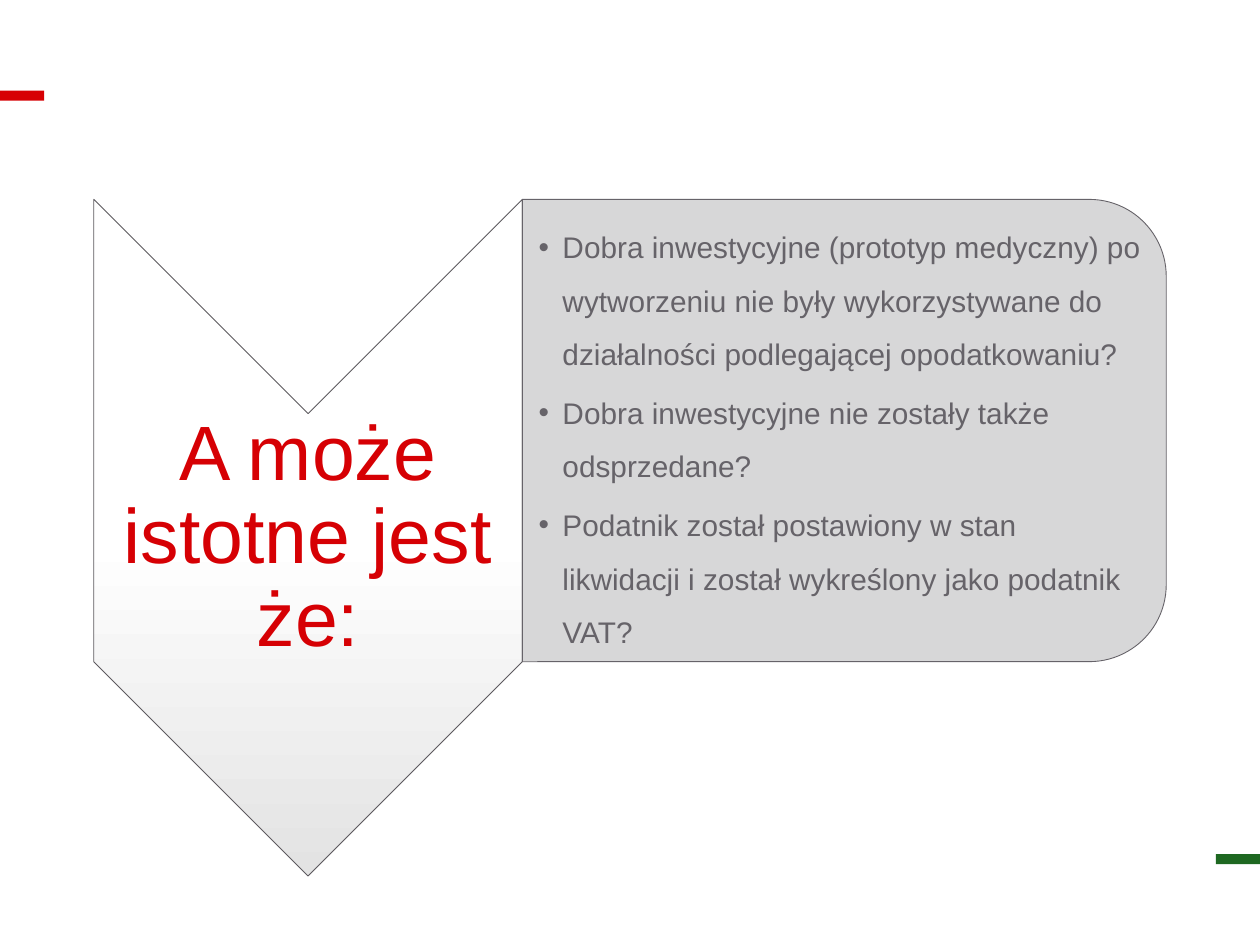
import lxml.etree
import pptx
import pptx.dml.color
import pptx.enum.shapes
import pptx.enum.text
import pptx.oxml.ns
import pptx.util

Cm = pptx.util.Cm
Pt = pptx.util.Pt
SHAPES = pptx.enum.shapes.MSO_SHAPE
ALIGN = pptx.enum.text.PP_ALIGN
RED = "D60004"
GREY = "666369"
TOP = 4.02
ARROW_LEFT = 1.89
ARROW_WIDTH = 8.64
PANEL_LEFT = ARROW_LEFT + ARROW_WIDTH
QUESTIONS = [
    "Dobra inwestycyjne (prototyp medyczny) po wytworzeniu nie były "
    "wykorzystywane do działalności podlegającej opodatkowaniu?",
    "Dobra inwestycyjne nie zostały także odsprzedane?",
    "Podatnik został postawiony w stan likwidacji i został wykreślony "
    "jako podatnik VAT?",
]


def colour(value):
    return pptx.dml.color.RGBColor.from_string(value)


def add_child(parent, tag, **attributes):
    return lxml.etree.SubElement(parent, pptx.oxml.ns.qn(tag), **attributes)


def write(para, text, size=17, ink=GREY, align=ALIGN.LEFT, spacing=1.0,
          after=0, bullet=False, hang=0.48):
    para.alignment = align
    para.line_spacing = spacing
    para.space_after = Pt(after)
    if bullet:
        para.level = 1
        properties = para._p.get_or_add_pPr()
        properties.set("marL", str(Cm(hang)))
        properties.set("indent", str(-Cm(hang)))
        add_child(properties, "a:buFont", typeface="Arial")
        add_child(properties, "a:buChar", char="•")
    span = para.add_run()
    span.text = text
    span.font.name = "Arial"
    span.font.size = Pt(size)
    span.font.color.rgb = colour(ink)


class Slide:
    def __init__(self, deck):
        self.page = deck.slides.add_slide(deck.slide_layouts[6])

    def shape(self, kind, left, top, width, height):
        shape = self.page.shapes.add_shape(
            kind, Cm(left), Cm(top), Cm(width), Cm(height))
        shape.shadow.inherit = False
        shape.line.fill.background()
        return shape

    def bar(self, left, top, fill):
        bar = self.shape(SHAPES.RECTANGLE, left, top, 0.89, 0.2)
        bar.fill.solid()
        bar.fill.fore_color.rgb = colour(fill)

    def turned(self, kind, left, top, width, height, line):
        shift = (width - height) / 2
        shape = self.shape(kind, left + shift, top - shift, height, width)
        shape.rotation = 90
        shape.line.color.rgb = colour(line)
        shape.line.width = Pt(0.5)
        return shape

    def arrow(self, left, top, width, height):
        arrow = self.turned(SHAPES.CHEVRON, left, top, width, height, "5D5A5F")
        arrow.fill.gradient()
        arrow.fill.gradient_angle = 0
        stops = zip(arrow.fill.gradient_stops, (0.5, 1), ("FFFFFF", "E3E3E3"))
        for stop, position, shade in stops:
            stop.position = position
            stop.color.rgb = colour(shade)

    def panel(self, left, top, width, height):
        panel = self.turned(SHAPES.ROUND_2_SAME_RECTANGLE,
                            left, top, width, height, GREY)
        panel.fill.solid()
        panel.fill.fore_color.rgb = colour("D3D3D4")
        shade = panel._element.spPr.find(".//" + pptx.oxml.ns.qn("a:srgbClr"))
        add_child(shade, "a:alpha", val="90000")

    def text(self, left, top, width, height, texts, inset, inset_left, **form):
        box = self.page.shapes.add_textbox(
            Cm(left), Cm(top), Cm(width), Cm(height))
        frame = box.text_frame
        frame.word_wrap = True
        frame.vertical_anchor = pptx.enum.text.MSO_ANCHOR.MIDDLE
        frame.margin_left = Cm(inset_left)
        frame.margin_top = frame.margin_right = frame.margin_bottom = Cm(inset)
        for index, text in enumerate(texts):
            para = frame.add_paragraph() if index else frame.paragraphs[0]
            write(para, text, **form)


def main():
    deck = pptx.Presentation()
    deck.slide_width = Cm(25.4)
    deck.slide_height = Cm(19.05)
    slide = Slide(deck)
    slide.bar(0, 1.83, "D70004")
    slide.bar(24.51, 17.22, "1E6821")
    slide.arrow(ARROW_LEFT, TOP, ARROW_WIDTH, 13.64)
    slide.text(ARROW_LEFT, 8.36, ARROW_WIDTH, 5, ["A może istotne jest że:"],
               inset=0.08, inset_left=0.08, size=44, ink=RED,
               align=ALIGN.CENTER, spacing=0.9, after=15.4)
    slide.panel(PANEL_LEFT, TOP, 12.98, 9.32)
    slide.text(PANEL_LEFT, 4.47, 12.52, 8.41, QUESTIONS,
               inset=0.03, inset_left=0.33, spacing=1.5, after=2.85,
               bullet=True)
    deck.save("out.pptx")


if __name__ == "__main__":
    main()
